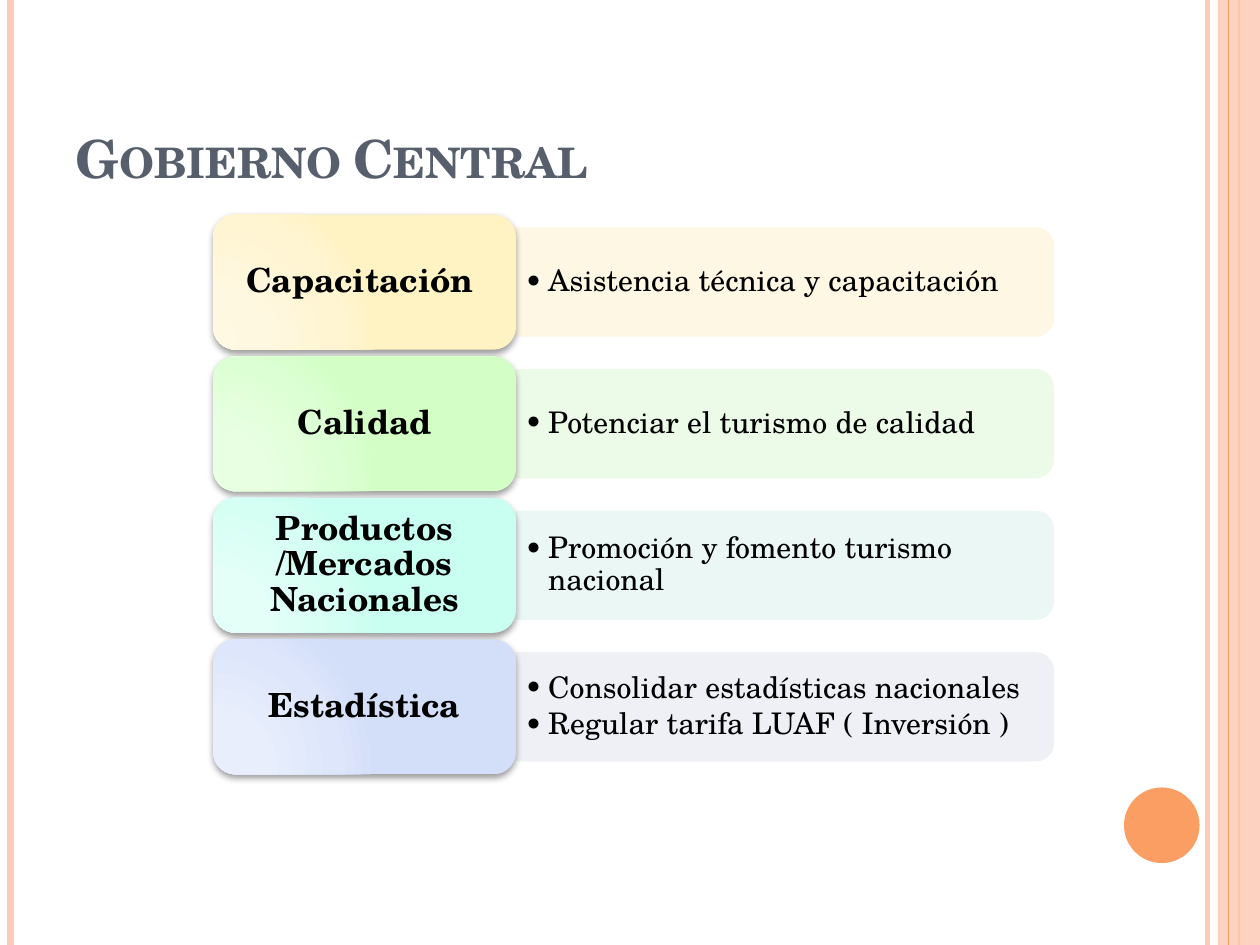
from lxml import etree
from pptx import Presentation
from pptx.dml.color import RGBColor
from pptx.enum.shapes import MSO_CONNECTOR, MSO_SHAPE
from pptx.enum.text import MSO_ANCHOR, PP_ALIGN
from pptx.oxml import parse_xml
from pptx.oxml.ns import nsdecls, qn
from pptx.util import Pt

STRAIGHT = MSO_CONNECTOR.STRAIGHT
RECT, OVAL = MSO_SHAPE.RECTANGLE, MSO_SHAPE.OVAL
ROUNDED, TAB = MSO_SHAPE.ROUNDED_RECTANGLE, MSO_SHAPE.ROUND_2_SAME_RECTANGLE
MIDDLE, BOTTOM = MSO_ANCHOR.MIDDLE, MSO_ANCHOR.BOTTOM
LEFT, CENTER = PP_ALIGN.LEFT, PP_ALIGN.CENTER

FONT = "TeX Gyre Schola"
COLORS = {"peach": "FDCCB8", "orange": "FB9E64", "title": "575F6D", "text": "000000"}

deck = Presentation()
deck.slide_width, deck.slide_height = Pt(720), Pt(540)
page = deck.slides.add_slide(deck.slide_layouts[5])


def add_block(kind, left, top, width, height, color, alpha=100):
    block = page.shapes.add_shape(kind, Pt(left), Pt(top), Pt(width), Pt(height))
    block.shadow.inherit = False
    block.fill.solid()
    block.fill.fore_color.rgb = RGBColor.from_string(color)
    block.line.fill.background()
    if alpha < 100:
        tint = block.fill._xPr.find(qn("a:solidFill"))[0]
        etree.SubElement(tint, qn("a:alpha"), val=str(alpha * 1000))
    return block


def write_text(frame, lines, margins, anchor, para_format, font_format, color):
    frame.word_wrap = True
    frame.vertical_anchor = anchor
    frame.margin_left = frame.margin_right = Pt(margins[0])
    frame.margin_top = frame.margin_bottom = Pt(margins[1])
    for index, line in enumerate(lines):
        para = frame.add_paragraph() if index else frame.paragraphs[0]
        for name, value in para_format.items():
            setattr(para, name, value)
        span = para.add_run()
        span.text = line
        for name, value in font_format.items():
            setattr(span.font, name, value)
        span.font.color.rgb = RGBColor.from_string(color)


stripes = [(690, "peach", 3), (6, "peach", 4.5), (708, "orange", 1.5)]
edge_line = (702, "orange", 0.75)
for x, color, weight in stripes + [edge_line]:
    if x == edge_line[0]:
        add_block(RECT, 696, 0, 24, 540, COLORS["peach"], 87)
    stripe = page.shapes.add_connector(STRAIGHT, Pt(x), Pt(0), Pt(x), Pt(540))
    stripe.line.color.rgb = RGBColor.from_string(COLORS[color])
    stripe.line.width = Pt(weight)
    etree.SubElement(stripe._element.spPr, qn("a:effectLst"))
add_block(OVAL, 642.3, 450, 43.2, 43.2, COLORS["orange"])

title = page.shapes.title
title.left, title.top, title.width, title.height = Pt(36), Pt(21.6), Pt(588), Pt(90)
write_text(title.text_frame, ["Gobierno Central"], (7.2, 3.6), BOTTOM,
           {"alignment": LEFT}, {"name": FONT, "size": Pt(30), "bold": True},
           COLORS["title"])
title.text_frame.paragraphs[0].runs[0].font._element.set("cap", "small")

rows = [
    ("Capacitación ", ["Asistencia técnica y capacitación"],
     "FDF7E1", ["FFF9E4", "FFF8E1", "FFF5D2", "FFF3C4"]),
    ("Calidad", ["Potenciar el turismo de calidad"],
     "EBFAE6", ["EAFFE4", "E8FFE2", "DDFFD4", "D3FFC6"]),
    ("Productos /Mercados Nacionales", ["Promoción y fomento turismo nacional"],
     "E9F7F4", ["E5FFF8", "E3FFF7", "D6FFF3", "C9FFF0"]),
    ("Estadística",
     ["Consolidar estadísticas nacionales", "Regular tarifa LUAF ( Inversión )"],
     "EDEFF5", ["EAEFFC", "E8EEFC", "DDE6FA", "D3DEF9"]),
]
STOPS = [0, 30, 75, 100]
FIRST_CENTER, PITCH = 161.2, 80.9
LABEL_LEFT, LABEL_WIDTH, LABEL_HEIGHT = 121.8, 173, 77.2
PANEL_LEFT, PANEL_WIDTH, PANEL_HEIGHT = 294.8, 307.5, 62.4

for index, (label, details, panel_color, shades) in enumerate(rows):
    center = FIRST_CENTER + index * PITCH
    panel = add_block(TAB, PANEL_LEFT + (PANEL_WIDTH - PANEL_HEIGHT) / 2,
                      center - PANEL_WIDTH / 2, PANEL_HEIGHT, PANEL_WIDTH,
                      panel_color, 90)
    panel.rotation = 90

    box = page.shapes.add_textbox(Pt(PANEL_LEFT), Pt(center - 27.8), Pt(304), Pt(55.6))
    write_text(box.text_frame, details, (5, 2.7), MIDDLE,
               {"alignment": LEFT, "line_spacing": 0.9, "space_after": Pt(2.5)},
               {"name": FONT, "size": Pt(17)}, COLORS["text"])
    for para in box.text_frame.paragraphs:
        props = para._p.get_or_add_pPr()
        props.set("marL", str(Pt(13.5)))
        props.set("indent", str(Pt(-13.5)))
        etree.SubElement(props, qn("a:buFont"), typeface=FONT)
        etree.SubElement(props, qn("a:buChar"), char="•")

    card = add_block(ROUNDED, LABEL_LEFT, center - LABEL_HEIGHT / 2,
                     LABEL_WIDTH, LABEL_HEIGHT, shades[-1])
    stops = "".join(f'<a:gs pos="{stop * 1000}"><a:srgbClr val="{shade}"/></a:gs>'
                    for stop, shade in zip(STOPS, shades))
    gradient = parse_xml(
        f'<a:gradFill {nsdecls("a")} rotWithShape="1"><a:gsLst>{stops}</a:gsLst>'
        '<a:path path="circle"><a:fillToRect l="5000" t="100000" r="120000" b="10000"/>'
        '</a:path></a:gradFill>')
    props = card._element.spPr
    props.replace(props.find(qn("a:solidFill")), gradient)
    shadow = parse_xml(
        f'<a:outerShdw {nsdecls("a")} blurRad="{Pt(4)}" dist="{Pt(2)}" dir="5400000" '
        'rotWithShape="0"><a:srgbClr val="000000"><a:alpha val="40000"/></a:srgbClr>'
        '</a:outerShdw>')
    props.find(qn("a:effectLst")).append(shadow)
    write_text(card.text_frame, [label], (9.5, 6.5), MIDDLE,
               {"alignment": CENTER, "line_spacing": 0.9},
               {"name": FONT, "size": Pt(19), "bold": True}, COLORS["text"])

deck.save("out.pptx")
